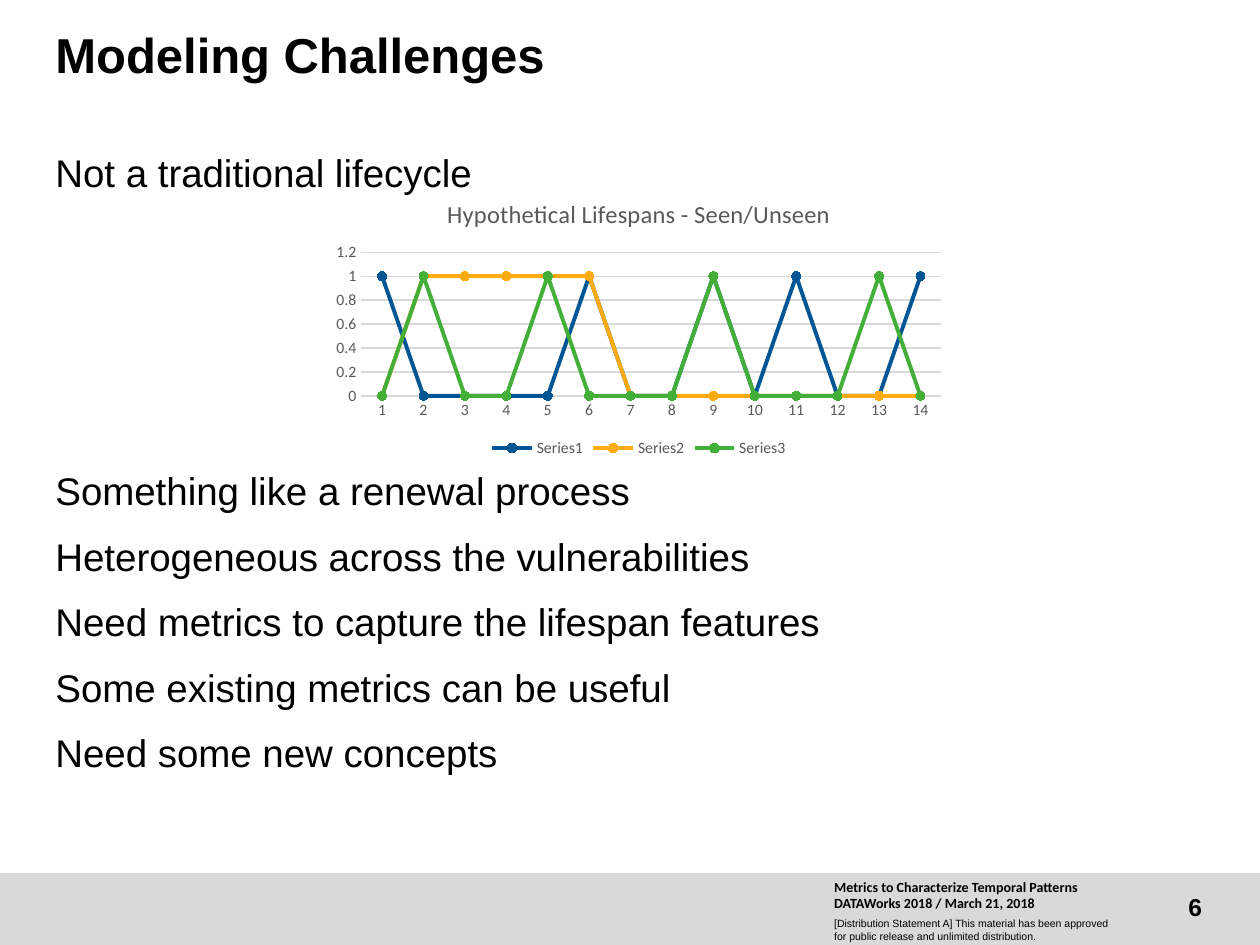
from pptx import Presentation
from pptx.chart.data import CategoryChartData
from pptx.dml.color import RGBColor
from pptx.enum.chart import XL_CHART_TYPE, XL_LEGEND_POSITION, XL_MARKER_STYLE, XL_TICK_MARK
from pptx.enum.shapes import MSO_SHAPE
from pptx.enum.text import MSO_ANCHOR, PP_ALIGN
from pptx.util import Inches, Pt

TITLE = "Modeling Challenges"
OPENING = ["Not a traditional lifecycle"]
POINTS = [
    "Something like a renewal process",
    "Heterogeneous across the vulnerabilities",
    "Need metrics to capture the lifespan features",
    "Some existing metrics can be useful",
    "Need some new concepts",
]
EVENT = ["Metrics to Characterize Temporal Patterns", "DATAWorks 2018 / March 21, 2018"]
STATEMENT = [
    "[Distribution Statement A] This material has been approved "
    "for public release and unlimited distribution."
]
PAGE_NUMBER = "6"
CHART_TITLE = "Hypothetical Lifespans - Seen/Unseen"
LIFESPANS = {
    "Series1": [1, 0, 0, 0, 0, 1, 0, 0, 1, 0, 1, 0, 0, 1],
    "Series2": [0, 1, 1, 1, 1, 1, 0, 0, 0, 0, 0, 0, 0, 0],
    "Series3": [0, 1, 0, 0, 1, 0, 0, 0, 1, 0, 0, 0, 1, 0],
}
THEME = {
    "text": "000000", "band": "D9D9D9", "grid": "D9D9D9", "chart_text": "595959",
    "series": ["005694", "FCAC12", "43AE38"],
    "font": "Arial", "chart_font": "Calibri",
    "title": 28, "body": 22, "page": 14, "event": 8, "statement": 6,
    "chart_title": 14, "chart_label": 9,
}
LEFT = 0.44
BODY_TOP = 1.18
BODY_WIDTH = 9.1
BODY_GAP = 11
BODY_PITCH = 0.506
CHART_ROWS = 4
FOOTER_LEFT = 6.62
FOOTER_WIDTH = 2.29


def color(name):
    return RGBColor.from_string(name)


def style_font(font, size, name, fill, bold=False):
    font.size = Pt(size)
    font.name = name
    font.bold = bold
    font.color.rgb = color(fill)


def add_text(slide, lines, box, size, font=THEME["font"], bold=False, gap=0,
             line_spacing=None, align=PP_ALIGN.LEFT, anchor=MSO_ANCHOR.TOP, right_inset=0):
    shape = slide.shapes.add_textbox(*map(Inches, box))
    frame = shape.text_frame
    frame.word_wrap = True
    frame.vertical_anchor = anchor
    frame.margin_left = frame.margin_top = frame.margin_bottom = 0
    frame.margin_right = Inches(right_inset)
    for index, line in enumerate(lines):
        paragraph = frame.paragraphs[0] if index == 0 else frame.add_paragraph()
        paragraph.alignment = align
        paragraph.line_spacing = line_spacing
        if index:
            paragraph.space_before = Pt(gap)
        run = paragraph.add_run()
        run.text = line
        style_font(run.font, size, font, THEME["text"], bold)


def style_line(line, fill, width):
    line.color.rgb = color(fill)
    line.width = Pt(width)


def add_lifespan_chart(slide):
    data = CategoryChartData()
    data.categories = [str(period + 1) for period in range(len(LIFESPANS["Series1"]))]
    for name, values in LIFESPANS.items():
        data.add_series(name, values)
    frame = slide.shapes.add_chart(
        XL_CHART_TYPE.LINE_MARKERS, *map(Inches, (2.57, 1.43, 5, 2.24)), data)
    chart = frame.chart
    label = (THEME["chart_label"], THEME["chart_font"], THEME["chart_text"])
    style_font(chart.font, *label)

    chart.has_title = True
    run = chart.chart_title.text_frame.paragraphs[0].add_run()
    run.text = CHART_TITLE
    style_font(run.font, THEME["chart_title"], THEME["chart_font"], THEME["chart_text"])
    chart.chart_title.include_in_layout = False

    chart.has_legend = True
    chart.legend.position = XL_LEGEND_POSITION.BOTTOM
    chart.legend.include_in_layout = False
    style_font(chart.legend.font, *label)

    for axis in (chart.category_axis, chart.value_axis):
        axis.major_tick_mark = axis.minor_tick_mark = XL_TICK_MARK.NONE
        style_font(axis.tick_labels.font, *label)
    style_line(chart.category_axis.format.line, THEME["grid"], 0.75)
    chart.value_axis.format.line.fill.background()
    chart.value_axis.has_major_gridlines = True
    style_line(chart.value_axis.major_gridlines.format.line, THEME["grid"], 0.75)

    chart.plots[0].vary_by_categories = False
    for series, fill in zip(chart.plots[0].series, THEME["series"]):
        series.smooth = False
        style_line(series.format.line, fill, 2.25)
        marker = series.marker
        marker.style = XL_MARKER_STYLE.CIRCLE
        marker.size = 5
        marker.format.fill.solid()
        marker.format.fill.fore_color.rgb = color(fill)
        style_line(marker.format.line, fill, 0.75)


def add_footer(slide):
    band = slide.shapes.add_shape(MSO_SHAPE.RECTANGLE, *map(Inches, (0, 6.93, 10, 0.57)))
    band.shadow.inherit = False
    band.fill.solid()
    band.fill.fore_color.rgb = color(THEME["band"])
    band.line.fill.background()
    add_text(slide, [PAGE_NUMBER], (8.98, 7, 0.56, 0.4), THEME["page"], bold=True,
             align=PP_ALIGN.RIGHT, anchor=MSO_ANCHOR.MIDDLE)
    add_text(slide, EVENT, (FOOTER_LEFT, 6.97, FOOTER_WIDTH, 0.37), THEME["event"],
             font=THEME["chart_font"], bold=True, right_inset=0.05)
    add_text(slide, STATEMENT, (FOOTER_LEFT, 7.28, FOOTER_WIDTH, 0.2), THEME["statement"])


def main():
    presentation = Presentation()
    presentation.slide_width = Inches(10)
    presentation.slide_height = Inches(7.5)
    slide = presentation.slides.add_slide(presentation.slide_layouts[6])
    add_footer(slide)
    add_text(slide, [TITLE], (LEFT, 0.25, 8.31, 0.73), THEME["title"], bold=True,
             line_spacing=0.9)
    add_text(slide, OPENING, (LEFT, BODY_TOP, BODY_WIDTH, 0.4), THEME["body"])
    points_top = BODY_TOP + (CHART_ROWS + 1) * BODY_PITCH
    add_text(slide, POINTS, (LEFT, points_top, BODY_WIDTH, 6.66 - points_top),
             THEME["body"], gap=BODY_GAP)
    add_lifespan_chart(slide)
    presentation.save("out.pptx")


if __name__ == "__main__":
    main()
